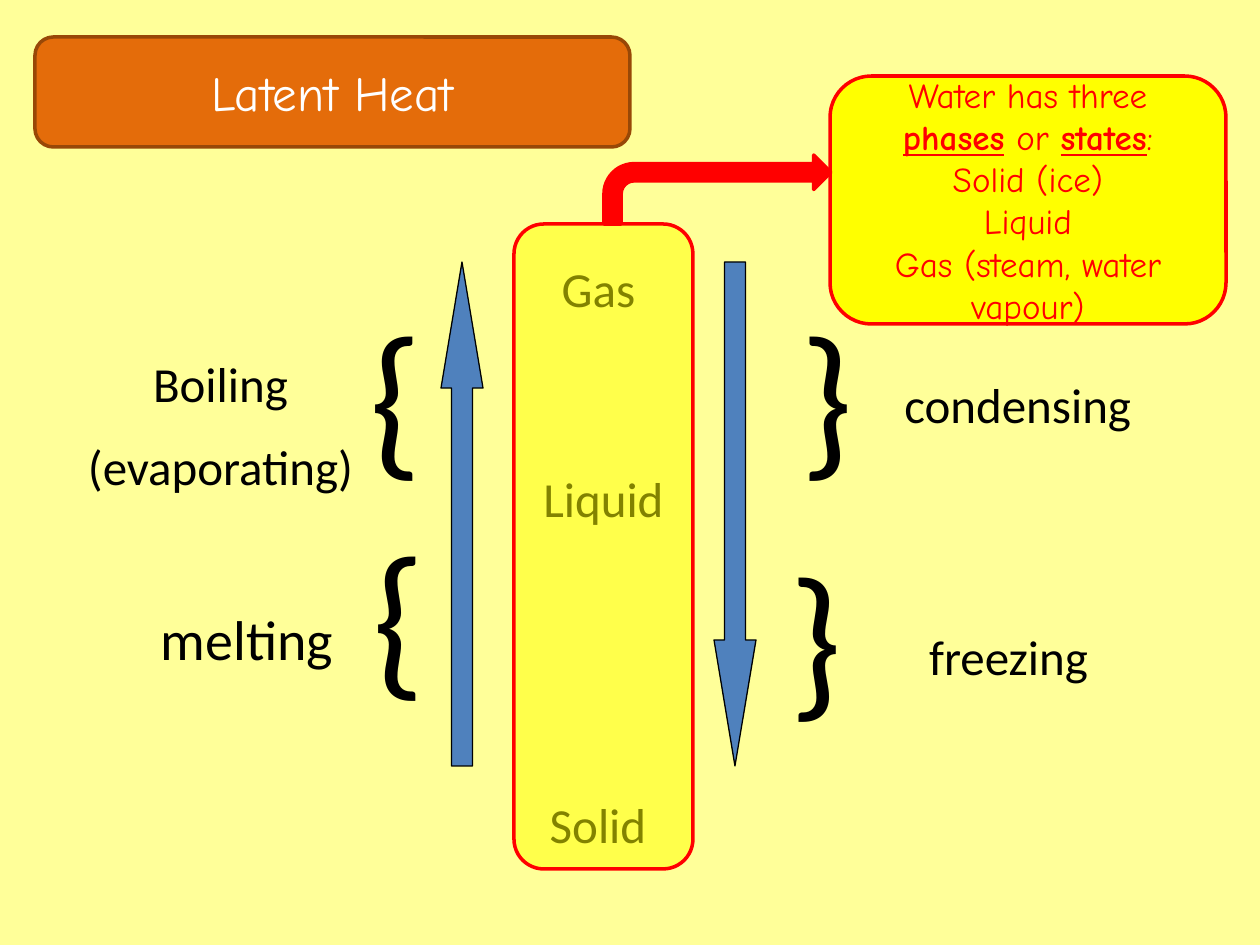
from lxml.etree import SubElement
from pptx import Presentation
from pptx.dml.color import RGBColor
from pptx.enum.shapes import MSO_SHAPE
from pptx.enum.text import MSO_ANCHOR, MSO_AUTO_SIZE, PP_ALIGN
from pptx.oxml.ns import qn
from pptx.util import Pt

EMU_PER_PX = 914400 / 126
COLORS = {
    "background": "FFFF99",
    "text": "000000",
    "arrow": "4F81BD",
    "title": "E46C0A",
    "title line": "984807",
    "title text": "FFFFFF",
    "yellow": "FFFF00",
    "red": "FF0000",
}


def px(length):
    return round(length * EMU_PER_PX)


def color(name):
    return RGBColor.from_string(COLORS[name])


class SlideBuilder:
    body_font = "Calibri"
    display_font = "Comic Neue"

    def __init__(self, deck):
        self.slide = deck.slides.add_slide(deck.slide_layouts[6])
        fill = self.slide.background.fill
        fill.solid()
        fill.fore_color.rgb = color("background")

    def style(self, para, font, size, ink, align):
        para.alignment = align
        para.font.name = font
        para.font.size = Pt(size)
        para.font.color.rgb = color(ink)

    def label(self, bounds, lines, size=28, align=PP_ALIGN.CENTER, wrap=True):
        box = self.slide.shapes.add_textbox(*map(px, bounds))
        frame = box.text_frame
        frame.word_wrap = wrap
        frame.auto_size = MSO_AUTO_SIZE.SHAPE_TO_FIT_TEXT
        for index, line in enumerate(lines):
            para = frame.add_paragraph() if index else frame.paragraphs[0]
            para.add_run().text = line
            self.style(para, self.body_font, size, "text", align)
            if index:
                para.space_before = Pt(size / 2)

    def shape(self, kind, bounds, fill, line, width=2, adjustments=(), opacity=None):
        shape = self.slide.shapes.add_shape(kind, *map(px, bounds))
        shape.shadow.inherit = False
        shape.fill.solid()
        shape.fill.fore_color.rgb = color(fill)
        shape.line.color.rgb = color(line)
        shape.line.width = Pt(width)
        for index, value in enumerate(adjustments):
            shape.adjustments[index] = value
        if opacity is not None:
            fill_color = shape.fill._xPr.find(qn("a:solidFill"))[0]
            SubElement(fill_color, qn("a:alpha"), val=str(opacity * 1000))
        return shape

    def panel(self, bounds, fill, line, ink, size, lines):
        """Rounded panel; each line is a list of (text, emphasized) spans."""
        panel = self.shape(MSO_SHAPE.ROUNDED_RECTANGLE, bounds, fill, line)
        frame = panel.text_frame
        frame.word_wrap = True
        frame.vertical_anchor = MSO_ANCHOR.MIDDLE
        for index, spans in enumerate(lines):
            para = frame.add_paragraph() if index else frame.paragraphs[0]
            self.style(para, self.display_font, size, ink, PP_ALIGN.CENTER)
            for text, emphasized in spans:
                span = para.add_run()
                span.text = text
                if emphasized:
                    span.font.bold = True
                    span.font.underline = True


def main():
    deck = Presentation()
    deck.slide_width, deck.slide_height = px(1260), px(945)
    page = SlideBuilder(deck)

    # Heating and cooling arrows
    for kind, left in ((MSO_SHAPE.UP_ARROW, 441), (MSO_SHAPE.DOWN_ARROW, 714)):
        page.shape(kind, (left, 262, 42, 504), "arrow", "text", 0.75, (0.5, 3))

    # Phases, seen through the column
    page.label((514, 788, 179, 72), ["Solid "])
    page.label((525, 462, 168, 72), ["Liquid "])
    page.label((525, 252, 158, 72), ["Gas "])

    # Braces
    for brace, left, top, width, wrap in (
        ("{", 360, 504, 71, True),
        ("{", 357, 284, 71, True),
        ("}", 788, 284, 95, True),
        ("}", 777, 525, 106, False),
    ):
        page.label((left, top, width, 214), [brace], 96, PP_ALIGN.LEFT, wrap)

    # Changes of phase
    page.label((126, 598, 242, 79), ["melting"], 32)
    page.label((63, 347, 315, 160), ["Boiling", "(evaporating)"])
    page.label((892, 368, 284, 72), ["condensing"], align=PP_ALIGN.LEFT)
    page.label((872, 620, 273, 72), ["freezing"])

    # Title
    page.panel((35, 37, 595, 110), "title", "title line", "title text", 28,
               [[("Latent Heat", False)]])

    # Column, callout and the arrow joining them
    page.shape(MSO_SHAPE.ROUNDED_RECTANGLE, (514, 224, 179, 645),
               "yellow", "red", opacity=51)
    page.panel((830, 76, 396, 248), "yellow", "red", "red", 20, [
        [("Water has three ", False), ("phases", True), (" or ", False),
         ("states", True), (":", False)],
        [("Solid (ice)", False)],
        [("Liquid", False)],
        [("Gas (steam, water vapour)", False)],
    ])
    page.shape(MSO_SHAPE.BENT_ARROW, (604, 155, 227, 69), "red", "red")

    deck.save("out.pptx")


if __name__ == "__main__":
    main()
